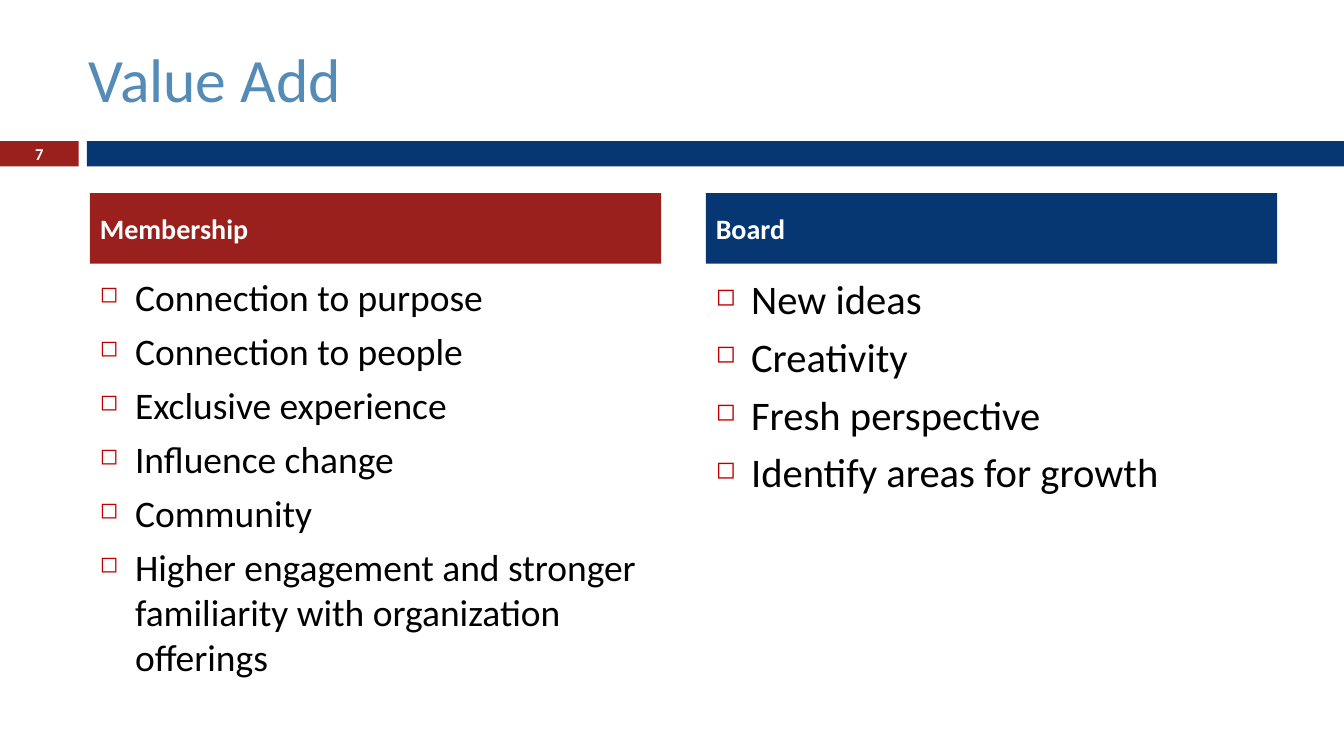
from dataclasses import dataclass

from lxml import etree
from pptx import Presentation
from pptx.dml.color import RGBColor
from pptx.enum import shapes, text
from pptx.oxml import ns
from pptx.util import Pt

RED = RGBColor(0x99, 0x20, 0x1C)
NAVY = RGBColor(0x06, 0x37, 0x72)
TITLE_BLUE = RGBColor(0x54, 0x8B, 0xB7)
BULLET_RED = RGBColor(0xC0, 0x00, 0x00)
BLACK = RGBColor(0, 0, 0)
WHITE = RGBColor(0xFF, 0xFF, 0xFF)

FONT = "Calibri"
SLIDE_WIDTH, SLIDE_HEIGHT = 960, 540
BAND_TOP, BAND_HEIGHT = 100.8, 18
NUMBER_WIDTH, BAND_LEFT = 56.16, 62
COLUMN_LEFT, COLUMN_STEP, COLUMN_WIDTH = 64.2, 440, 408
HEADER_TOP, HEADER_HEIGHT = 138, 50.4
LIST_TOP, LIST_HEIGHT = 192.2, 282.2
BULLET_INDENT, ITEM_GAP = 25.2, 6.4


@dataclass(frozen=True)
class Box:
    left: float
    top: float
    width: float
    height: float

    def lengths(self) -> tuple[Pt, Pt, Pt, Pt]:
        return Pt(self.left), Pt(self.top), Pt(self.width), Pt(self.height)


@dataclass(frozen=True)
class Style:
    size: float
    color: RGBColor
    bold: bool = False
    align: text.PP_ALIGN = text.PP_ALIGN.LEFT


@dataclass(frozen=True)
class Column:
    heading: str
    color: RGBColor
    item_size: float
    items: tuple[str, ...]


COLUMNS = (
    Column("Membership", RED, 26.8, (
        "Connection to purpose",
        "Connection to people",
        "Exclusive experience",
        "Influence change",
        "Community",
        "Higher engagement and stronger familiarity with organization offerings",
    )),
    Column("Board", NAVY, 29, (
        "New ideas",
        "Creativity",
        "Fresh perspective",
        "Identify areas for growth",
    )),
)


def add_bar(slide, box: Box, color: RGBColor):
    bar = slide.shapes.add_shape(shapes.MSO_SHAPE.RECTANGLE, *box.lengths())
    bar.shadow.inherit = False
    bar.fill.solid()
    bar.fill.fore_color.rgb = color
    bar.line.fill.background()
    return bar


def write(paragraph, words: str, style: Style) -> None:
    paragraph.alignment = style.align
    run = paragraph.add_run()
    run.text = words
    run.font.name = FONT
    run.font.size = Pt(style.size)
    run.font.bold = style.bold
    run.font.color.rgb = style.color


def write_line(shape, words: str, style: Style) -> None:
    """Write one vertically centred line into a shape."""
    frame = shape.text_frame
    frame.word_wrap = True
    frame.vertical_anchor = text.MSO_ANCHOR.MIDDLE
    write(frame.paragraphs[0], words, style)


def add_bullet(paragraph) -> None:
    properties = paragraph._p.get_or_add_pPr()
    properties.set("marL", str(Pt(BULLET_INDENT)))
    properties.set("indent", str(-Pt(BULLET_INDENT)))
    color = etree.SubElement(properties, ns.qn("a:buClr"))
    etree.SubElement(color, ns.qn("a:srgbClr"), val=str(BULLET_RED))
    etree.SubElement(properties, ns.qn("a:buSzPct"), val="60000")
    etree.SubElement(properties, ns.qn("a:buChar"), char="◻")


def add_column(slide, left: float, column: Column) -> None:
    header = add_bar(slide, Box(left, HEADER_TOP, COLUMN_WIDTH, HEADER_HEIGHT), column.color)
    write_line(header, column.heading, Style(20, WHITE, bold=True))

    benefits = slide.shapes.add_textbox(
        *Box(left, LIST_TOP, COLUMN_WIDTH, LIST_HEIGHT).lengths()).text_frame
    benefits.word_wrap = True
    for index, item in enumerate(column.items):
        paragraph = benefits.add_paragraph() if index else benefits.paragraphs[0]
        add_bullet(paragraph)
        if index:
            paragraph.space_before = Pt(ITEM_GAP)
        write(paragraph, item, Style(column.item_size, BLACK))


def main() -> None:
    deck = Presentation()
    deck.slide_width, deck.slide_height = Pt(SLIDE_WIDTH), Pt(SLIDE_HEIGHT)
    slide = deck.slides.add_slide(deck.slide_layouts[6])

    title = slide.shapes.add_textbox(*Box(NUMBER_WIDTH, 21.6, 856, 68.4).lengths())
    write_line(title, "Value Add", Style(44, TITLE_BLUE))

    page_number = add_bar(slide, Box(0, BAND_TOP, NUMBER_WIDTH, BAND_HEIGHT), RED)
    page_number.text_frame.margin_top = page_number.text_frame.margin_bottom = 0
    write_line(page_number, "7", Style(11.9, WHITE, True, text.PP_ALIGN.CENTER))
    add_bar(slide, Box(BAND_LEFT, BAND_TOP, SLIDE_WIDTH - BAND_LEFT, BAND_HEIGHT), NAVY)

    for index, column in enumerate(COLUMNS):
        add_column(slide, COLUMN_LEFT + index * COLUMN_STEP, column)

    deck.save("out.pptx")


if __name__ == "__main__":
    main()
